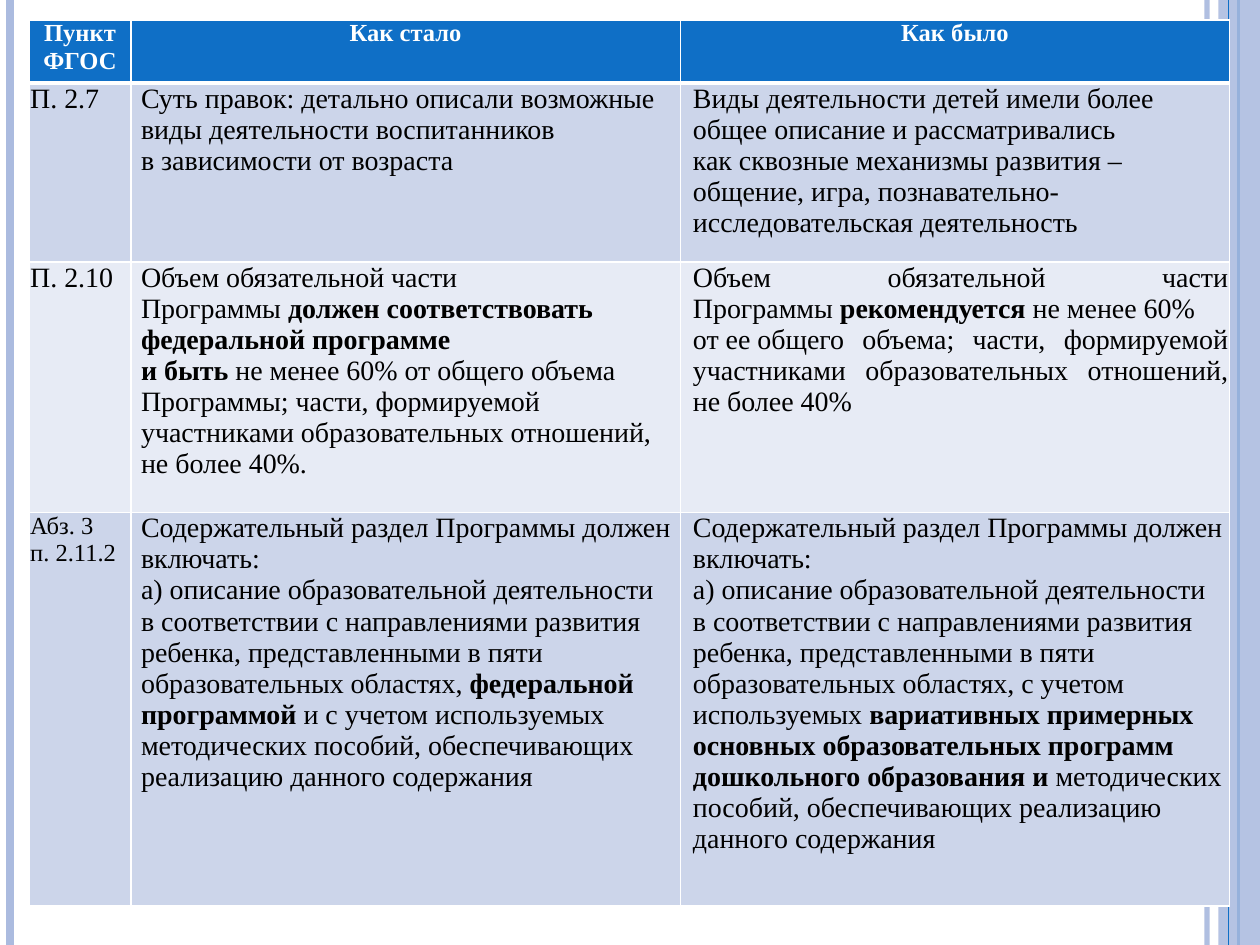
from dataclasses import dataclass

from lxml.etree import SubElement
from pptx import Presentation
from pptx.dml.color import RGBColor
from pptx.enum.shapes import MSO_CONNECTOR as Conn, MSO_SHAPE as Shape
from pptx.enum.text import PP_ALIGN as Align
from pptx.oxml.ns import qn
from pptx.util import Inches, Pt

COLORS = {"blue": "0F6FC6", "pale": "ABBBDF", "band": "CCD5EA",
          "light": "E7EBF5", "white": "FFFFFF", "black": "000000"}
FONT = "Times New Roman"
TIE = chr(160)  # no-break space, typed as ~ in the texts below
COLS = (0.81, 4.36, 4.36)
ROWS = (0.5, 1.42, 1.99, 3.12)


@dataclass
class Stripe:
    x: float
    width: float
    color: str
    alpha: int = 100


@dataclass
class Entry:
    """Cell text: | parts paragraphs, * encloses bold words, ~ ties words."""
    text: str
    size: int = 16
    align: Align = Align.LEFT
    indent: float = 0


def rgb(name: str) -> RGBColor:
    return RGBColor.from_string(COLORS[name])


def fade(node, alpha: int) -> None:
    if alpha < 100:
        tone = next(node.iter(qn("a:srgbClr")))
        SubElement(tone, qn("a:alpha")).set("val", str(alpha * 1000))


def draw_stripe(slide, stripe: Stripe) -> None:
    x = Inches(stripe.x)
    line = slide.shapes.add_connector(Conn.STRAIGHT, x, 0, x, Inches(7.5))
    line.line.color.rgb = rgb(stripe.color)
    line.line.width = Pt(stripe.width)
    props = line._element.spPr
    fade(props, stripe.alpha)
    SubElement(props, qn("a:effectLst"))


def draw_panel(slide) -> None:
    panel = slide.shapes.add_shape(Shape.RECTANGLE, Inches(9.67), 0,
                                   Inches(0.33), Inches(7.5))
    panel.shadow.inherit = False
    panel.fill.solid()
    panel.fill.fore_color.rgb = rgb("pale")
    panel.line.fill.background()
    fade(panel._element.spPr, 87)


def set_edges(cell, top: float, bottom: float) -> None:
    props = cell._tc.get_or_add_tcPr()
    edges = (("L", 1), ("R", 1), ("T", top), ("B", bottom))
    for i, (side, width) in enumerate(edges):
        edge = SubElement(props, qn(f"a:ln{side}"), w=str(Pt(width)))
        fill = SubElement(edge, qn("a:solidFill"))
        SubElement(fill, qn("a:srgbClr"), val=COLORS["white"])
        props.insert(i, edge)


def add_run(par, text: str, size: int, bold: bool, color: str) -> None:
    run = par.add_run()
    run.text = text.replace("~", TIE)
    run.font.name = FONT
    run.font.size = Pt(size)
    run.font.bold = bold
    run.font.color.rgb = rgb(color)


def fill_cell(cell, entry: Entry, row: int) -> None:
    head = row == 0
    cell.margin_left = cell.margin_right = Inches(0.01)
    cell.margin_top = cell.margin_bottom = 0
    cell.fill.solid()
    back = "blue" if head else "band" if row % 2 else "light"
    cell.fill.fore_color.rgb = rgb(back)
    set_edges(cell, 3 if row == 1 else 1, 3 if head else 1)
    frame = cell.text_frame
    for i, text in enumerate(entry.text.split("|")):
        par = frame.add_paragraph() if i else frame.paragraphs[0]
        par.alignment = entry.align
        props = par._p.get_or_add_pPr()
        props.set("marL", str(Inches(entry.indent)))
        props.set("indent", "0")
        for j, part in enumerate(text.split("*")):
            for k, piece in enumerate(part.split("\n")):
                if k:
                    par.add_line_break()
                    par._p[-1].get_or_add_rPr().set("sz", str(entry.size * 100))
                add_run(par, piece, entry.size, head or j % 2 == 1,
                        "white" if head else "black")


def title(text: str) -> Entry:
    return Entry(text, 14, Align.CENTER)


def point(text: str, size: int = 16) -> Entry:
    return Entry(text, size, Align.JUSTIFY)


def new(text: str) -> Entry:
    return Entry(text, indent=0.07)


def old(text: str, align: Align = Align.LEFT) -> Entry:
    return Entry(text, align=align, indent=0.09)


# Opening words shared by both versions of the last point
PART = ("Содержательный раздел Программы должен включать:\n"
        "а) описание образовательной деятельности в~соответствии "
        "с~направлениями развития ребенка, представленными в~пяти "
        "образовательных областях,")

GRID = (
    (title("Пункт ФГОС"), title("Как стало"), title("Как было")),
    (point("П. 2.7"),
     new("Суть правок: детально описали возможные виды деятельности "
         "воспитанников в~зависимости от~возраста"),
     old("Виды деятельности детей имели более общее описание "
         "и~рассматривались как~сквозные механизмы развития~– общение, "
         "игра, познавательно-исследовательская деятельность")),
    (point("П. 2.10"),
     new("Объем обязательной части Программы~*должен соответствовать "
         "федеральной программе и~быть~*не~менее~60% от~общего объема "
         "Программы; части, формируемой участниками образовательных "
         "отношений, не~более 40%.~"),
     old("Объем обязательной части Программы~*рекомендуется*~не~менее~60% "
         "от~ее~общего объема; части, формируемой участниками "
         "образовательных отношений, не~более 40%", Align.JUSTIFY)),
    (point("Абз.~3~|п.~2.11.2", 14),
     new(PART + "~*федеральной программой*~и~с~учетом используемых "
         "методических пособий, обеспечивающих реализацию данного "
         "содержания"),
     old(PART + " с~учетом используемых~*вариативных примерных "
         "основных образовательных программ дошкольного образования и*"
         "~методических пособий, обеспечивающих реализацию данного "
         "содержания")),
)


def draw_table(slide) -> None:
    table = slide.shapes.add_table(
        len(ROWS), len(COLS), Inches(0.23), Inches(0.16),
        Inches(sum(COLS)), Inches(sum(ROWS))).table
    for col, width in zip(table.columns, COLS):
        col.width = Inches(width)
    for i, (row, height) in enumerate(zip(table.rows, ROWS)):
        row.height = Inches(height)
        for cell, entry in zip(row.cells, GRID[i]):
            fill_cell(cell, entry, i)


def main() -> None:
    deck = Presentation()
    deck.slide_width, deck.slide_height = Inches(10), Inches(7.5)
    slide = deck.slides.add_slide(deck.slide_layouts[6])

    # Side stripes, with the panel over the first three
    for stripe in (Stripe(9.58, 3, "pale", 93), Stripe(0.08, 4.5, "pale"),
                   Stripe(9.83, 1.5, "blue")):
        draw_stripe(slide, stripe)
    draw_panel(slide)
    draw_stripe(slide, Stripe(9.75, 0.75, "blue"))

    # Comparison table
    draw_table(slide)
    deck.save("out.pptx")


if __name__ == "__main__":
    main()
